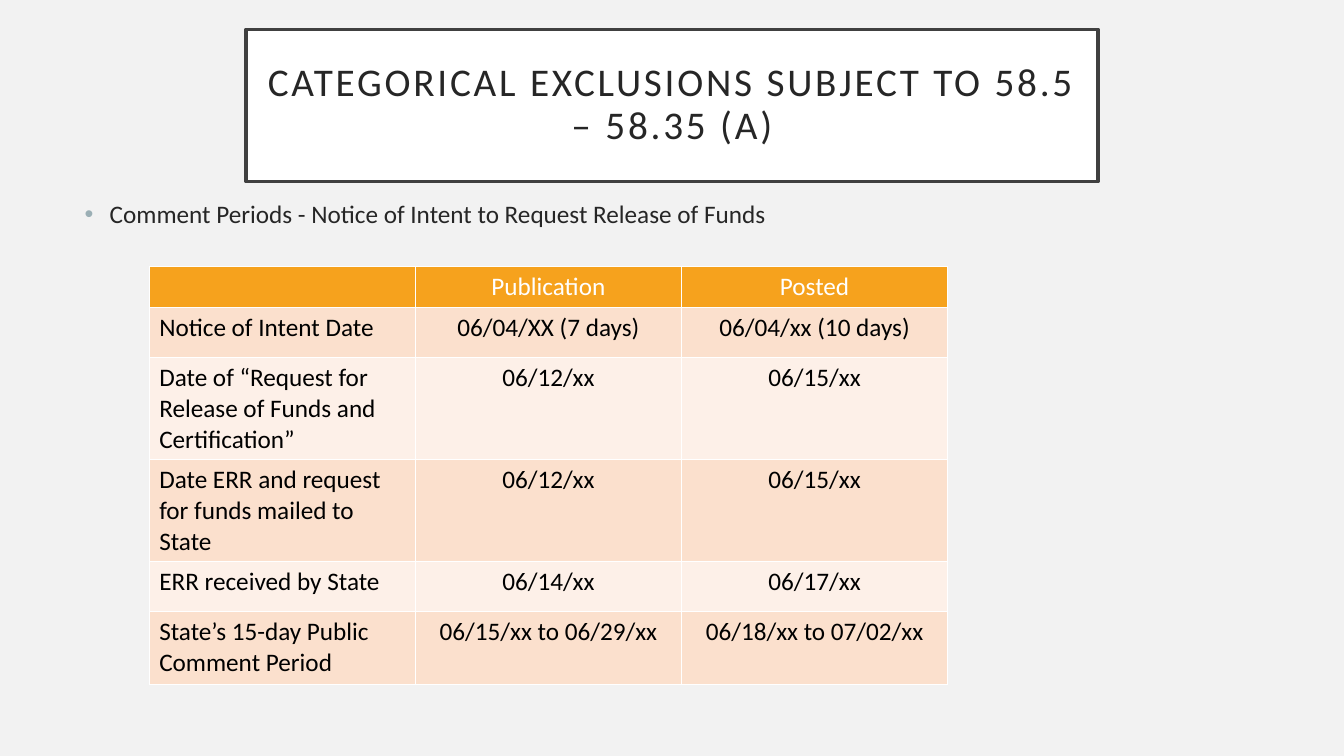
from dataclasses import dataclass
from lxml.etree import SubElement
from pptx import Presentation
from pptx.dml.color import RGBColor
from pptx.enum.text import MSO_ANCHOR, MSO_AUTO_SIZE, PP_ALIGN
from pptx.oxml.ns import qn
from pptx.util import Inches, Pt

TITLE = "CATEGORICAL EXCLUSIONS SUBJECT TO 58.5 – 58.35 (A)"
BULLET = "Comment Periods - Notice of Intent to Request Release of Funds"
SCHEDULE = [
    ("", "Publication", "Posted"),
    ("Notice of Intent Date", "06/04/XX (7 days)", "06/04/xx (10 days)"),
    ("Date of “Request for Release of Funds and Certification”", "06/12/xx", "06/15/xx"),
    ("Date ERR and request for funds mailed to State", "06/12/xx", "06/15/xx"),
    ("ERR received by State", "06/14/xx", "06/17/xx"),
    ("State’s 15-day Public Comment Period", "06/15/xx to 06/29/xx", "06/18/xx to 07/02/xx"),
]
ROW_HEIGHTS = (0.41, 0.5, 1.01, 1.01, 0.5, 0.72)
COLUMN_WIDTH = 2.64
SLIDE_SIZE = (13.33, 7.5)
TITLE_BOX = (2.44, 0.29, 8.45, 1.51)
BULLET_BOX = (0.74, 1.92, 9.4, 5.14)
TABLE_CORNER = (1.48, 2.64)


@dataclass(frozen=True)
class Theme:
    font: str = "Calibri"
    title_size: int = 28
    body_size: int = 18
    background: str = "F2F2F2"
    white: str = "FFFFFF"
    frame: str = "404040"
    ink: str = "262626"
    bullet: str = "9BAFB5"
    header: str = "F6A21D"
    bands: tuple = ("FDF0E8", "FBE0CD")
    cell_ink: str = "000000"


THEME = Theme()


def paint(fill, color):
    fill.solid()
    fill.fore_color.rgb = RGBColor.from_string(color)


def write(text_frame, text, size, color, alignment=PP_ALIGN.LEFT):
    text_frame.text = text
    paragraph = text_frame.paragraphs[0]
    paragraph.alignment = alignment
    for run in paragraph.runs:
        run.font.name = THEME.font
        run.font.size = Pt(size)
        run.font.bold = False
        run.font.color.rgb = RGBColor.from_string(color)
    return paragraph


def add_solid_fill(parent, color):
    SubElement(SubElement(parent, qn("a:solidFill")), qn("a:srgbClr"), val=color)


def add_title(slide):
    title = slide.shapes.title
    title.left, title.top, title.width, title.height = map(Inches, TITLE_BOX)
    paint(title.fill, THEME.white)
    paint(title.line.fill, THEME.frame)
    title.line.width = Pt(2.5)
    text_frame = title.text_frame
    text_frame.word_wrap = True
    text_frame.auto_size = MSO_AUTO_SIZE.NONE
    text_frame.vertical_anchor = MSO_ANCHOR.MIDDLE
    for side in ("left", "top", "right", "bottom"):
        setattr(text_frame, f"margin_{side}", Inches(0.2))
    paragraph = write(text_frame, TITLE, THEME.title_size, THEME.ink, PP_ALIGN.CENTER)
    paragraph.line_spacing = 0.9
    paragraph.runs[0].font._element.set("spc", "200")


def add_bullet(slide):
    text_frame = slide.shapes.add_textbox(*map(Inches, BULLET_BOX)).text_frame
    text_frame.word_wrap = True
    paragraph = write(text_frame, BULLET, THEME.body_size, THEME.ink)
    paragraph.space_before = Pt(10)
    properties = paragraph._p.get_or_add_pPr()
    properties.set("marL", str(Inches(0.25)))
    properties.set("indent", str(Inches(-0.25)))
    SubElement(SubElement(properties, qn("a:buClr")), qn("a:srgbClr"), val=THEME.bullet)
    SubElement(properties, qn("a:buFont"), typeface="Arial")
    SubElement(properties, qn("a:buChar"), char="•")


def format_cell(cell, text, row, column):
    color = THEME.cell_ink if row else THEME.white
    alignment = PP_ALIGN.CENTER if column else PP_ALIGN.LEFT
    write(cell.text_frame, text, THEME.body_size, color, alignment)
    properties = cell._tc.get_or_add_tcPr()
    for edge in ("lnL", "lnR", "lnT", "lnB"):
        border = SubElement(properties, qn(f"a:{edge}"), w=str(Pt(1)))
        add_solid_fill(border, THEME.white)
    paint(cell.fill, THEME.bands[row % 2] if row else THEME.header)


def add_schedule(slide):
    columns = len(SCHEDULE[0])
    size = (COLUMN_WIDTH * columns, sum(ROW_HEIGHTS))
    frame = slide.shapes.add_table(len(SCHEDULE), columns, *map(Inches, TABLE_CORNER + size))
    table = frame.table
    for column in table.columns:
        column.width = Inches(COLUMN_WIDTH)
    for row, texts in enumerate(SCHEDULE):
        table.rows[row].height = Inches(ROW_HEIGHTS[row])
        for column, text in enumerate(texts):
            format_cell(table.cell(row, column), text, row, column)


def main():
    presentation = Presentation()
    presentation.slide_width, presentation.slide_height = map(Inches, SLIDE_SIZE)
    slide = presentation.slides.add_slide(presentation.slide_layouts[5])
    paint(slide.background.fill, THEME.background)
    add_title(slide)
    add_bullet(slide)
    add_schedule(slide)
    presentation.save("out.pptx")


if __name__ == "__main__":
    main()
